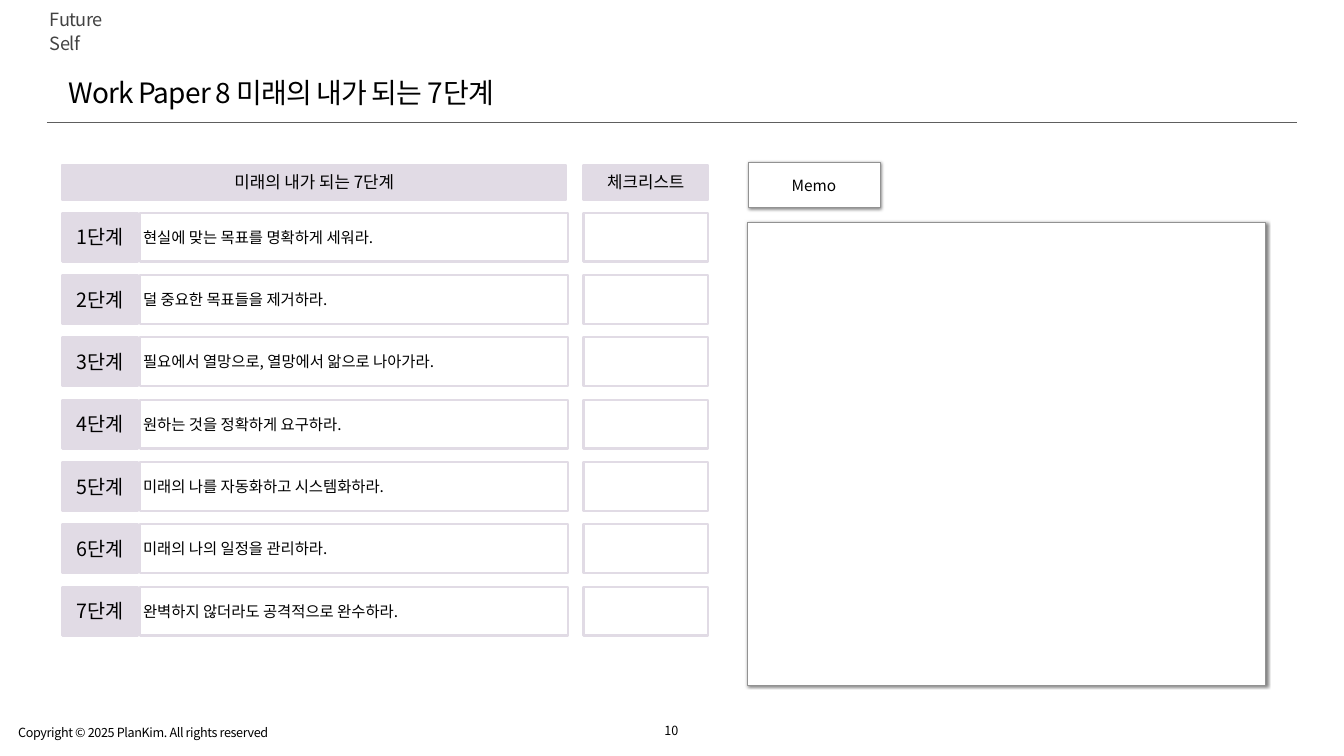
from dataclasses import dataclass

from lxml.etree import SubElement
from pptx import Presentation
from pptx.dml.color import RGBColor
from pptx.enum.shapes import MSO_CONNECTOR, MSO_SHAPE
from pptx.enum.text import MSO_ANCHOR, MSO_AUTO_SIZE, PP_ALIGN
from pptx.oxml.ns import qn
from pptx.shapes.autoshape import Shape
from pptx.slide import Slide
from pptx.util import Inches, Pt

SLIDE_WIDTH, SLIDE_HEIGHT = 26.67, 15
FONT = "Noto Sans CJK KR"
COLORS = {
    "ink": "000000",
    "brand": "424242",
    "rule": "5E5E5E",
    "lilac": "E1DBE5",
    "paper": "FFFFFF",
    "memo_edge": "929292",
}
STEPS = [
    "현실에 맞는 목표를 명확하게 세워라.",
    "덜 중요한 목표들을 제거하라.",
    "필요에서 열망으로, 열망에서 앎으로 나아가라.",
    "원하는 것을 정확하게 요구하라.",
    "미래의 나를 자동화하고 시스템화하라.",
    "미래의 나의 일정을 관리하라.",
    "완벽하지 않더라도 공격적으로 완수하라.",
]


@dataclass(frozen=True)
class Span:
    """Start and length, in inches, along one axis of the grid."""
    start: float
    length: float


@dataclass(frozen=True)
class TextStyle:
    size: float
    color: str = "ink"
    align: PP_ALIGN = PP_ALIGN.LEFT
    anchor: MSO_ANCHOR = MSO_ANCHOR.MIDDLE
    line_spacing: float = 1.0
    tracking: float = 0
    inset: float = 0.06
    wrap: bool = True


@dataclass(frozen=True)
class BoxStyle:
    fill: str | None
    line: str
    line_width: float
    shadow: bool = False


COLUMNS = {
    "heading": Span(1.23, 10.01),
    "step": Span(1.24, 1.5),
    "statement": Span(2.78, 8.49),
    "check": Span(11.58, 2.47),
    "memo_label": Span(14.84, 2.62),
    "memo": Span(14.84, 10.27),
}
HEADING_ROW = Span(3.27, 0.69)
FIRST_STEP_ROW = Span(4.22, 0.97)
STEP_PITCH = (11.64 - 4.22) / 6

FILLED = BoxStyle("lilac", "lilac", 3)
OUTLINED = BoxStyle(None, "lilac", 3)
MEMO = BoxStyle("paper", "memo_edge", 1, shadow=True)

HEADING_TEXT = TextStyle(24, align=PP_ALIGN.CENTER)
STEP_TEXT = TextStyle(28, align=PP_ALIGN.CENTER)
STATEMENT_TEXT = TextStyle(22)
MEMO_TEXT = TextStyle(22, align=PP_ALIGN.CENTER, inset=0.11)
TITLE_TEXT = TextStyle(40, line_spacing=1.1, tracking=-1.2)
BRAND_TEXT = TextStyle(26, "brand", line_spacing=1.1, tracking=-0.8)
COPYRIGHT_TEXT = TextStyle(18, line_spacing=1.1, tracking=-0.5)
NUMBER_TEXT = TextStyle(18, align=PP_ALIGN.CENTER, anchor=MSO_ANCHOR.BOTTOM, wrap=False)


def rgb(name: str) -> RGBColor:
    return RGBColor.from_string(COLORS[name])


def write(shape: Shape, words: str, style: TextStyle) -> None:
    frame = shape.text_frame
    frame.text = words
    frame.word_wrap = style.wrap
    frame.auto_size = MSO_AUTO_SIZE.NONE
    frame.vertical_anchor = style.anchor
    frame.margin_left = frame.margin_right = Inches(style.inset)
    frame.margin_top = frame.margin_bottom = Inches(style.inset)
    paragraph = frame.paragraphs[0]
    paragraph.alignment = style.align
    paragraph.line_spacing = style.line_spacing
    font = paragraph.font
    font.size = Pt(style.size)
    font.color.rgb = rgb(style.color)
    font.name = FONT
    properties = paragraph._p.pPr.find(qn("a:defRPr"))
    SubElement(properties, qn("a:ea"), typeface=FONT)
    if style.tracking:
        properties.set("spc", str(round(style.tracking * 100)))


def add_shadow(shape: Shape) -> None:
    """Soft black shadow falling to the lower right."""
    effects = shape._element.spPr.find(qn("a:effectLst"))
    shadow = SubElement(effects, qn("a:outerShdw"), blurRad=str(Pt(5)), dist=str(Pt(2)),
                        dir=str(45 * 60000), algn="ctr", rotWithShape="0")
    color = SubElement(shadow, qn("a:srgbClr"), val=COLORS["ink"])
    SubElement(color, qn("a:alpha"), val="50000")


def add_box(slide: Slide, column: Span, row: Span, style: BoxStyle,
            words: str = "", text_style: TextStyle = STATEMENT_TEXT) -> None:
    box = slide.shapes.add_shape(
        MSO_SHAPE.RECTANGLE, Inches(column.start), Inches(row.start),
        Inches(column.length), Inches(row.length))
    box.shadow.inherit = False
    if style.fill:
        box.fill.solid()
        box.fill.fore_color.rgb = rgb(style.fill)
    else:
        box.fill.background()
    box.line.color.rgb = rgb(style.line)
    box.line.width = Pt(style.line_width)
    if style.shadow:
        add_shadow(box)
    if words:
        write(box, words, text_style)


def add_label(slide: Slide, column: Span, row: Span, words: str, style: TextStyle) -> None:
    label = slide.shapes.add_textbox(
        Inches(column.start), Inches(row.start), Inches(column.length), Inches(row.length))
    write(label, words, style)


def add_frame(slide: Slide) -> None:
    """Brand, title, rule and footer around the work paper."""
    add_label(slide, Span(0.93, 1.62), Span(0.08, 1.02), "Future Self", BRAND_TEXT)
    rule = slide.shapes.add_connector(
        MSO_CONNECTOR.STRAIGHT, Inches(0.93), Inches(2.43), Inches(25.74), Inches(2.43))
    rule.line.color.rgb = rgb("rule")
    rule.line.width = Pt(1)
    SubElement(rule._element.spPr, qn("a:effectLst"))
    footer = Span(14.31, 0.4)
    add_label(slide, Span(0.3, 6.06), footer,
              "Copyright © 2025 PlanKim. All rights reserved", COPYRIGHT_TEXT)
    add_label(slide, Span(13.14, 0.37), footer, "10", NUMBER_TEXT)
    title = slide.shapes.title
    title.left, title.top = Inches(1.3), Inches(1.41)
    title.width, title.height = Inches(10.82), Inches(0.78)
    write(title, "Work Paper 8 미래의 내가 되는 7단계", TITLE_TEXT)


def add_steps(slide: Slide) -> None:
    add_box(slide, COLUMNS["heading"], HEADING_ROW, FILLED, "미래의 내가 되는 7단계", HEADING_TEXT)
    add_box(slide, COLUMNS["check"], HEADING_ROW, FILLED, "체크리스트", HEADING_TEXT)
    for index, statement in enumerate(STEPS):
        row = Span(FIRST_STEP_ROW.start + index * STEP_PITCH, FIRST_STEP_ROW.length)
        add_box(slide, COLUMNS["step"], row, FILLED, f"{index + 1}단계", STEP_TEXT)
        add_box(slide, COLUMNS["statement"], row, OUTLINED, statement, STATEMENT_TEXT)
        add_box(slide, COLUMNS["check"], row, OUTLINED)


def main() -> None:
    deck = Presentation()
    deck.slide_width, deck.slide_height = Inches(SLIDE_WIDTH), Inches(SLIDE_HEIGHT)
    slide = deck.slides.add_slide(deck.slide_layouts[5])
    add_frame(slide)
    add_steps(slide)
    add_box(slide, COLUMNS["memo_label"], Span(3.22, 0.9), MEMO, "Memo", MEMO_TEXT)
    add_box(slide, COLUMNS["memo"], Span(4.41, 9.18), MEMO)
    deck.save("out.pptx")


if __name__ == "__main__":
    main()
